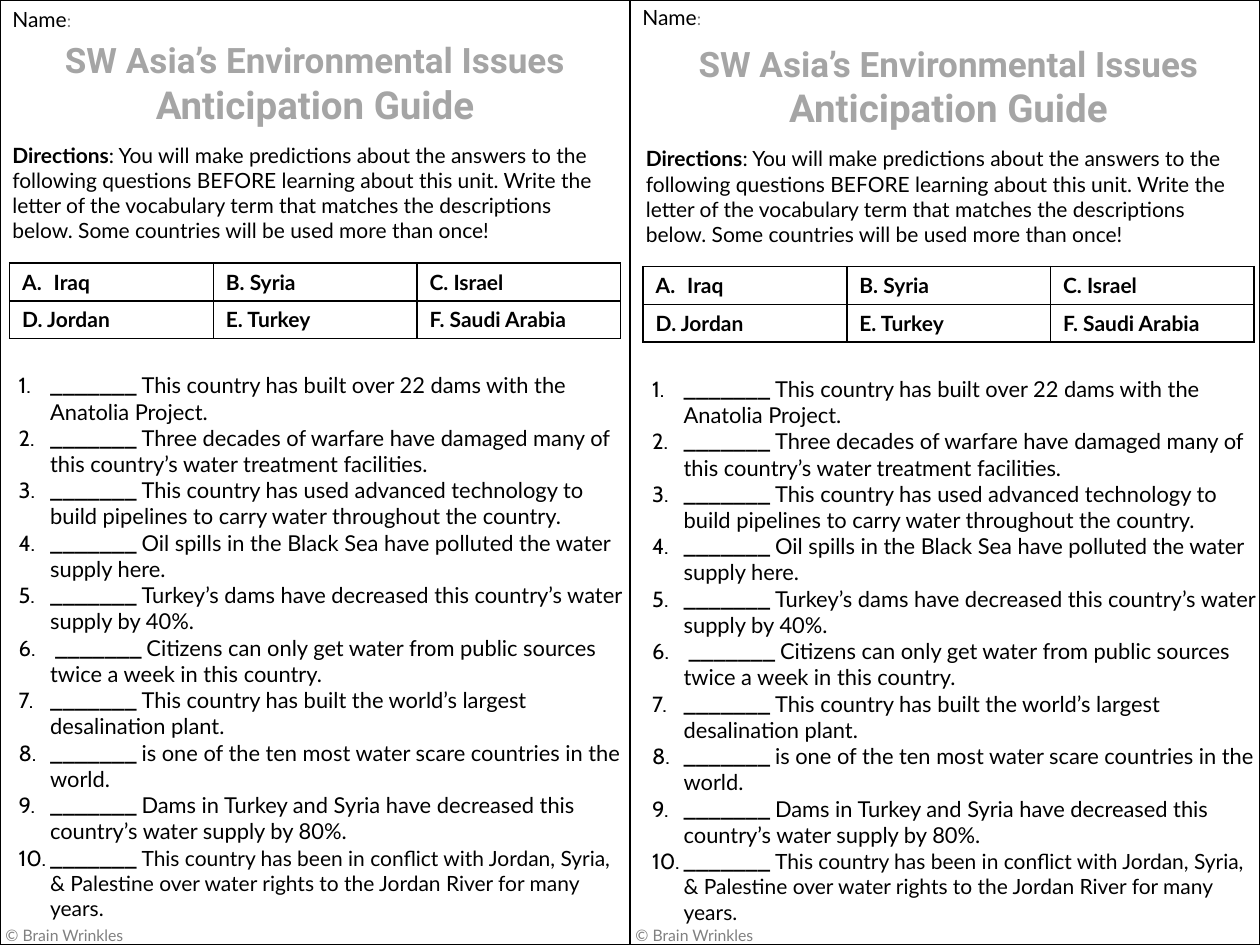
from lxml import etree
from pptx import Presentation
from pptx.dml.color import RGBColor
from pptx.enum import shapes, text
from pptx.oxml import ns
from pptx.util import Pt

PAGE_W, PAGE_H = 360, 540
BODY = dict(name="Lato", size=12, color="000000")
HEADING = dict(name="Roboto", size=20, color="A5A5A5", bold=True)
BLANK = dict(name="Cabin", size=12.5, color="000000")
QUIET = dict(name="Lato", size=9, color="808080")

DIRECTIONS = (
    ": You will make predictions about the answers to the following questions "
    "BEFORE learning about this unit. Write the letter of the vocabulary term that "
    "matches the descriptions below. Some countries will be used more than once!")
COUNTRIES = [["Iraq", "B. Syria", "C. Israel"],
             ["D. Jordan", "E. Turkey", "F. Saudi Arabia"]]
QUESTIONS = [
    "This country has built over 22 dams with the Anatolia Project.",
    "Three decades of warfare have damaged many of this country’s water treatment facilities.",
    "This country has used advanced technology to build pipelines to carry water throughout the country.",
    "Oil spills in the Black Sea have polluted the water supply here.",
    "Turkey’s dams have decreased this country’s water supply by 40%.",
    "Citizens can only get water from public sources twice a week in this country.",
    "This country has built the world’s largest desalination plant.",
    "is one of the ten most water scare countries in the world.",
    "Dams in Turkey and Syria have decreased this country’s water supply by 80%.",
    "This country has been in conflict with Jordan, Syria, & Palestine over water rights "
    "to the Jordan River for many years.",
]


def rgb(value):
    return RGBColor.from_string(value)


def add_run(p, words, style, **changes):
    r = p.add_run()
    r.text = words
    for key, value in {**style, **changes}.items():
        if key == "color":
            r.font.color.rgb = rgb(value)
        else:
            setattr(r.font, key, Pt(value) if key == "size" else value)


def number(p, scheme):
    """Give a paragraph an automatic number with a hanging indent."""
    pPr = p._p.get_or_add_pPr()
    pPr.set("marL", str(Pt(18)))
    pPr.set("indent", str(-Pt(18)))
    etree.SubElement(pPr, ns.qn("a:buAutoNum"), type=scheme)


def place(sp, left, top, width, height):
    for key, value in dict(left=left, top=top, width=width, height=height).items():
        setattr(sp, key, Pt(value))


def add_text(slide, *box):
    tf = slide.shapes.add_textbox(*map(Pt, box)).text_frame
    tf.word_wrap = True
    return tf


def add_frame(slide, width):
    sp = slide.shapes.add_shape(
        shapes.MSO_SHAPE.RECTANGLE, 0, 0, Pt(width), Pt(PAGE_H))
    sp.shadow.inherit = False
    sp.fill.background()
    sp.line.color.rgb = rgb("000000")
    sp.line.width = Pt(1)


def add_heading(sp, *box):
    place(sp, *box)
    tf = sp.text_frame
    settings = dict(word_wrap=True, auto_size=text.MSO_AUTO_SIZE.NONE,
                    vertical_anchor=text.MSO_ANCHOR.TOP, margin_left=Pt(5),
                    margin_right=Pt(5), margin_top=Pt(3), margin_bottom=Pt(3))
    for key, value in settings.items():
        setattr(tf, key, value)
    lines = [("SW Asia’s Environmental Issues", 20), ("Anticipation Guide", 22)]
    for i, (words, size) in enumerate(lines):
        p = tf.add_paragraph() if i else tf.paragraphs[0]
        p.alignment = text.PP_ALIGN.CENTER
        add_run(p, words, HEADING, size=size)


def add_borders(cell):
    tcPr = cell._tc.get_or_add_tcPr()
    for side in ("lnL", "lnR", "lnT", "lnB"):
        ln = etree.SubElement(tcPr, ns.qn("a:" + side), w=str(Pt(1)))
        fill = etree.SubElement(ln, ns.qn("a:solidFill"))
        etree.SubElement(fill, ns.qn("a:srgbClr"), val="000000")


def add_countries(slide, left, top, width, height):
    rows, cols = len(COUNTRIES), len(COUNTRIES[0])
    table = slide.shapes.add_table(
        rows, cols, *map(Pt, (left, top, width, height))).table
    table.first_row = table.horz_banding = False
    for i, names in enumerate(COUNTRIES):
        table.rows[i].height = Pt(height / rows)
        for j, country in enumerate(names):
            cell = table.cell(i, j)
            add_borders(cell)
            cell.fill.background()
            p = cell.text_frame.paragraphs[0]
            if i == j == 0:
                number(p, "alphaUcPeriod")
            add_run(p, country, BODY, bold=True)


def add_questions(slide, *box):
    tf = add_text(slide, *box)
    for i, question in enumerate(QUESTIONS):
        p = tf.add_paragraph() if i else tf.paragraphs[0]
        number(p, "arabicPeriod")
        add_run(p, " _______ " if i == 5 else "_______ ", BLANK)
        add_run(p, question, BODY, size=12 if i == len(QUESTIONS) - 1 else 12.5)


def add_worksheet(slide, heading, left, name_top, shift):
    """Fill one half page; shift moves its body right and down."""
    p = add_text(slide, left, name_top, 209, 21.6).paragraphs[0]
    add_run(p, "Name", BODY)
    add_run(p, ":", BODY, size=10, color="808080")

    x = left + shift
    add_heading(heading, x, 19.2 + shift, PAGE_W, 56)
    p = add_text(slide, x, 77.8 + shift, PAGE_W, 65.5).paragraphs[0]
    add_run(p, "Directions", BODY, bold=True)
    add_run(p, DIRECTIONS, BODY)
    add_countries(slide, x + 5.5, 150.3 + shift, 349.2, 43.2)
    add_questions(slide, x + 3.6, 209 + shift, PAGE_W, 310)

    p = add_text(slide, left - 4, 525.2, 209, 18).paragraphs[0]
    add_run(p, "© Brain Wrinkles", QUIET)


def main():
    prs = Presentation()
    prs.slide_width, prs.slide_height = Pt(2 * PAGE_W), Pt(PAGE_H)
    slide = prs.slides.add_slide(prs.slide_layouts[5])
    for width in (PAGE_W, 2 * PAGE_W):
        add_frame(slide, width)
    add_worksheet(slide, slide.shapes.title, 0, 0, 0)
    second_heading = slide.shapes.add_textbox(0, 0, 0, 0)
    add_worksheet(slide, second_heading, PAGE_W, -1, 2)
    prs.save("out.pptx")


if __name__ == "__main__":
    main()
